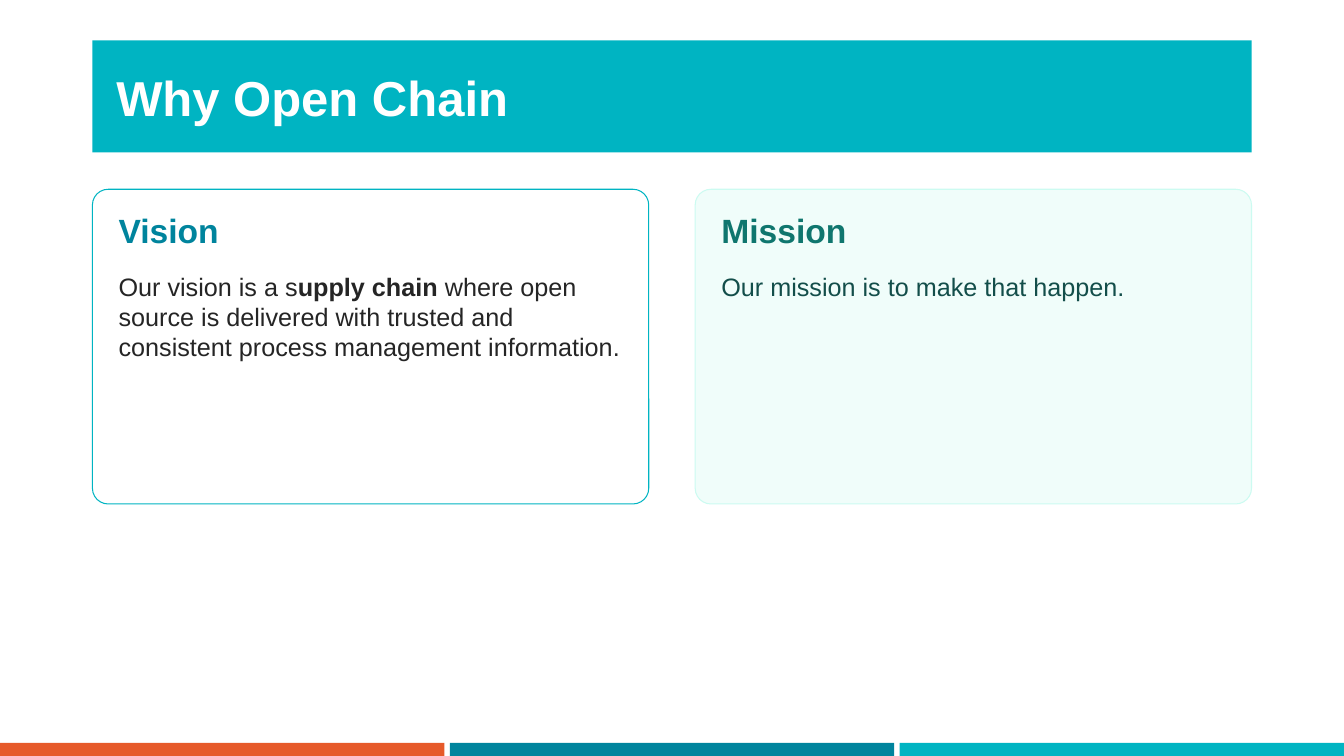
"""Build the Why Open Chain slide with its vision and mission cards."""
from dataclasses import dataclass

from pptx import Presentation
from pptx.dml.color import RGBColor
from pptx.enum.shapes import MSO_SHAPE
from pptx.enum.text import MSO_ANCHOR, MSO_AUTO_SIZE, PP_ALIGN
from pptx.shapes.autoshape import Shape
from pptx.slide import Slide
from pptx.text.text import Font
from pptx.util import Cm, Pt

RECTANGLE = MSO_SHAPE.RECTANGLE
ROUNDED = MSO_SHAPE.ROUNDED_RECTANGLE
MIDDLE = MSO_ANCHOR.MIDDLE
NO_AUTOFIT = MSO_AUTO_SIZE.NONE
LEFT = PP_ALIGN.LEFT
TITLE_ONLY = 5


@dataclass(frozen=True)
class Theme:
    font: str = "Arial"
    title_size: float = 35
    heading_size: float = 24
    body_size: float = 18
    white: str = "FFFFFF"
    orange: str = "E65A2A"
    blue: str = "00849D"
    turquoise: str = "00B4C2"
    ink: str = "252525"
    mint: str = "F0FDFA"
    mint_edge: str = "CCFBF1"
    green: str = "0F766E"
    dark_green: str = "134E4A"


@dataclass(frozen=True)
class Phrase:
    text: str
    bold: bool = False


@dataclass(frozen=True)
class Card:
    heading: str
    phrases: tuple[Phrase, ...]
    fill: str
    edge: str
    heading_color: str
    body_color: str


THEME = Theme()
SLIDE_WIDTH, SLIDE_HEIGHT = 33.87, 19.05
MARGIN, CONTENT_WIDTH = 2.33, 29.21
CARD_TOP, CARD_WIDTH, CARD_HEIGHT = 4.77, 14.02, 7.93
CARD_STEP = CONTENT_WIDTH - CARD_WIDTH
PADDING_X, PADDING_Y = 0.66, 0.52
BAND_HEIGHT, BAND_GAP = 0.33, 0.14
BAND_COLORS = (THEME.orange, THEME.blue, THEME.turquoise)
CARDS = (
    Card(
        "Vision",
        (
            Phrase("Our vision is a s"),
            Phrase("upply chain ", bold=True),
            Phrase("where open source is delivered with trusted and "
                   "consistent process management information."),
        ),
        THEME.white, THEME.turquoise, THEME.blue, THEME.ink,
    ),
    Card(
        "Mission",
        (Phrase("Our mission is to make that happen."),),
        THEME.mint, THEME.mint_edge, THEME.green, THEME.dark_green,
    ),
)


def style_font(font: Font, size: float, color: str, bold: bool) -> None:
    font.name = THEME.font
    font.size = Pt(size)
    font.bold = bold
    font.color.rgb = RGBColor.from_string(color)


def paint(shape: Shape, color: str) -> None:
    shape.fill.solid()
    shape.fill.fore_color.rgb = RGBColor.from_string(color)


def draw_bands(slide: Slide) -> None:
    width = (SLIDE_WIDTH - BAND_GAP * (len(BAND_COLORS) - 1)) / len(BAND_COLORS)
    for index, color in enumerate(BAND_COLORS):
        band = slide.shapes.add_shape(
            RECTANGLE, Cm(index * (width + BAND_GAP)),
            Cm(SLIDE_HEIGHT - BAND_HEIGHT), Cm(width), Cm(BAND_HEIGHT))
        band.shadow.inherit = False
        band.line.fill.background()
        paint(band, color)


def draw_title(slide: Slide, text: str) -> None:
    title = slide.shapes.title
    title.left, title.top = Cm(MARGIN), Cm(1.02)
    title.width, title.height = Cm(CONTENT_WIDTH), Cm(2.82)
    paint(title, THEME.turquoise)
    frame = title.text_frame
    frame.text = text
    frame.auto_size = NO_AUTOFIT
    frame.vertical_anchor = MIDDLE
    frame.margin_left = Cm(0.6)
    heading = frame.paragraphs[0]
    heading.alignment = LEFT
    style_font(heading.runs[0].font, THEME.title_size, THEME.white, True)


def draw_card(slide: Slide, card: Card, left: float) -> None:
    group = slide.shapes.add_group_shape()
    panel = group.shapes.add_shape(
        ROUNDED, Cm(left), Cm(CARD_TOP), Cm(CARD_WIDTH), Cm(CARD_HEIGHT))
    panel.adjustments[0] = 0.05
    panel.shadow.inherit = False
    paint(panel, card.fill)
    panel.line.color.rgb = RGBColor.from_string(card.edge)
    panel.line.width = Pt(0.75)

    content = group.shapes.add_textbox(
        Cm(left + PADDING_X), Cm(CARD_TOP + PADDING_Y),
        Cm(CARD_WIDTH - 2 * PADDING_X), Cm(CARD_HEIGHT - 2 * PADDING_Y))
    frame = content.text_frame
    frame.word_wrap = True
    frame.margin_left = frame.margin_right = 0
    frame.margin_top = frame.margin_bottom = 0
    frame.text = card.heading
    style_font(frame.paragraphs[0].runs[0].font,
               THEME.heading_size, card.heading_color, True)
    body = frame.add_paragraph()
    body.space_before = Pt(15)
    for phrase in card.phrases:
        run = body.add_run()
        run.text = phrase.text
        style_font(run.font, THEME.body_size, card.body_color, phrase.bold)


def main() -> None:
    deck = Presentation()
    deck.slide_width, deck.slide_height = Cm(SLIDE_WIDTH), Cm(SLIDE_HEIGHT)
    slide = deck.slides.add_slide(deck.slide_layouts[TITLE_ONLY])
    draw_bands(slide)
    draw_title(slide, "Why Open Chain")
    for index, card in enumerate(CARDS):
        draw_card(slide, card, MARGIN + index * CARD_STEP)
    deck.save("out.pptx")


if __name__ == "__main__":
    main()
